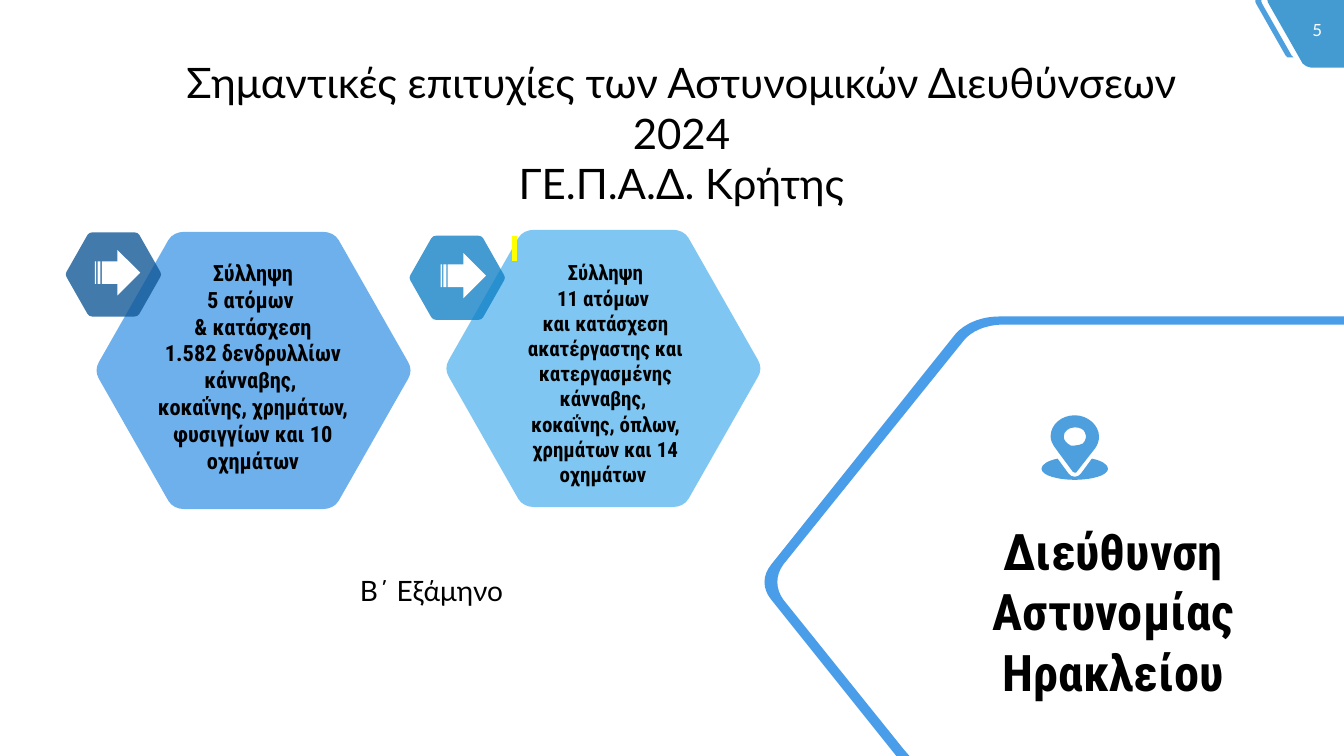
"""Build the slide on police successes in Crete, laid out on a grid of tenth-inch cells."""
from lxml import etree
from pptx import Presentation
from pptx import util as u
from pptx.dml.color import RGBColor
from pptx.enum import shapes, text
from pptx.oxml.ns import qn

CELL = u.Inches(0.1)
COLS, ROWS = 133.33, 75
BLACK = RGBColor(0x00, 0x00, 0x00)
WHITE = RGBColor(0xFF, 0xFF, 0xFF)
SKY = RGBColor(0x60, 0xB9, 0xEF)
OCEAN = RGBColor(0x14, 0x83, 0xC7)
BLUE = RGBColor(0x4A, 0x9D, 0xE8)
NAVY = RGBColor(0x13, 0x59, 0x98)
STEEL = RGBColor(0x4D, 0x9F, 0xDD)
LATO, ROBOTO = "Lato", "Roboto Condensed"

prs = Presentation()
prs.slide_width, prs.slide_height = u.Inches(13.33), u.Inches(7.5)
s = prs.slides.add_slide(prs.slide_layouts[5])


def trace(contours, color, alpha=100, box=(0, 0, 1, 1)):
    """Draw closed contours: a pair is a straight step, six numbers are a Bezier curve."""
    left, top, width, height = box
    builder = None
    for contour in contours:
        points = [((left + step[i] * width) * CELL, (top + step[i + 1] * height) * CELL)
                  for step in contour for i in range(0, len(step), 2)]
        if builder is None:
            builder = s.shapes.build_freeform(*points[0])
        else:
            builder.move_to(*points[0])
        builder.add_line_segments(points[1:], close=True)
    sp = builder.convert_to_shape()
    nodes = iter(list(next(sp._element.iter(qn("a:path")))))
    for contour in contours:
        next(nodes)
        for step in contour[1:]:
            node = next(nodes)
            if len(step) == 6:
                curve = etree.Element(qn("a:cubicBezTo"))
                node.addprevious(curve)
                for line in (node, next(nodes), next(nodes)):
                    curve.append(line[0])
                    line.getparent().remove(line)
        next(nodes)
    sp.shadow.inherit = False
    sp.fill.solid()
    sp.fill.fore_color.rgb = color
    sp.line.fill.background()
    if alpha < 100:
        clr = sp.fill._xPr.find(qn("a:solidFill"))[0]
        etree.SubElement(clr, qn("a:alpha"), val=str(alpha * 1000))


def write(box, lines, size, name, color=BLACK, bold=False, sp=None):
    """Fill a text box, or a given placeholder, with centred paragraphs."""
    left, top, width, height = (round(v * CELL) for v in box)
    sp = sp or s.shapes.add_textbox(left, top, width, height)
    sp.left, sp.top, sp.width, sp.height = left, top, width, height
    tf = sp.text_frame
    tf.word_wrap = True
    tf.auto_size = text.MSO_AUTO_SIZE.NONE
    tf.vertical_anchor = text.MSO_ANCHOR.TOP
    for i, line in enumerate(lines):
        p = tf.paragraphs[0] if i == 0 else tf.add_paragraph()
        p.text = line
        p.alignment = text.PP_ALIGN.CENTER
        for r in p.runs:
            for key, value in dict(size=u.Pt(size), name=name, bold=bold).items():
                setattr(r.font, key, value)
            r.font.color.rgb = color
    return tf


trace([[(125.7, 0), (COLS, 0), (COLS, 6.7), (130, 6.7), (129.7, 6.7, 129.4, 6.5, 129.2, 6.3),
        (125.9, 0.5), (125.8, 0.3, 125.7, 0.2, 125.7, 0)]], OCEAN, 80)
trace([[(124.5, 0), (125.1, 0), (125.1, 0.1, 125.1, 0.3, 125.2, 0.4), (128.1, 5.5), (128.3, 5.7),
        (127.7, 5.7), (127.5, 5.5), (124.6, 0.4), (124.5, 0.3, 124.5, 0.1, 124.5, 0)]], STEEL)
write((128.6, 1.45, 4.1, 3), ["5"], 12, LATO, WHITE)

half = [(0.23, 0.03), (0.24, 0.01, 0.26, 0, 0.28, 0), (0.72, 0), (0.74, 0, 0.76, 0.01, 0.77, 0.03),
        (0.99, 0.47), (1, 0.49, 1, 0.51, 0.99, 0.53)]
hexagon = half + [tuple(1 - v for v in step) for step in half]
cards = [((44.2, 22.8), SKY, (40.6, 23.38), OCEAN, (43.7, 25.1)),
         ((9.5, 23), BLUE, (6.5, 23.05), NAVY, (9.4, 24.8))]
for corner, color, badge_corner, badge_color, arrow_corner in cards:
    trace([hexagon], color, 80, (*corner, 31.3, 27.5))
    trace([hexagon], badge_color, 80, (*badge_corner, 9.5, 8.35))
    arrow = s.shapes.add_shape(shapes.MSO_SHAPE.STRIPED_RIGHT_ARROW,
                               *(round(v * CELL) for v in (*arrow_corner, 4.5, 4.5)))
    arrow.shadow.inherit = False
    arrow.fill.solid()
    arrow.fill.fore_color.rgb = WHITE
    arrow.line.fill.background()

write((12.6, 5.15, 110, 11.1),
      ["Σημαντικές επιτυχίες των Αστυνομικών Διευθύνσεων 2024\vΓΕ.Π.Α.Δ. Κρήτης"],
      30, LATO, sp=s.shapes.title)
write((29.7, 56.4, 26.2, 4.4), ["Β΄ Εξάμηνο"], 20, LATO)
tf = write((49.8, 22.8, 20.5, 26.3),
           [" ", "Σύλληψη", "11 ατόμων ", "και κατάσχεση", "ακατέργαστης και κατεργασμένης",
            "κάνναβης, ", "κοκαΐνης, όπλων,", "χρημάτων και 14 οχημάτων "], 15, ROBOTO, bold=True)
marker = tf.paragraphs[0]
marker.alignment = text.PP_ALIGN.LEFT
highlight = etree.Element(qn("a:highlight"))
etree.SubElement(highlight, qn("a:srgbClr"), val="FFFF00")
marker.runs[0].font._rPr.find(qn("a:latin")).addprevious(highlight)
write((13.1, 25.2, 24, 25.2),
      ["Σύλληψη", "5 ατόμων ", "& κατάσχεση", "1.582 δενδρυλλίων κάνναβης, ",
       "κοκαΐνης, χρημάτων, φυσιγγίων και 10 οχημάτων"], 16, ROBOTO, bold=True)

trace([[(COLS, ROWS), (COLS, 32.2), (99.6, 32.2), (97.9, 32.2, 96.3, 32.8, 95.5, 33.9), (77.7, 56),
        (76.9, 57.1, 76.9, 58.4, 77.7, 59.5), (89.6, 74.3), (90.2, ROWS), (88.9, ROWS),
        (76.5, 59.5), (75.6, 58.4, 75.6, 57.1, 76.5, 56), (94.8, 33.1),
        (95.7, 32.1, 97.3, 31.4, 99.1, 31.4), (COLS, 31.4)]], BLUE)
write((92.05, 51.1, 36.7, 19.2), ["Διεύθυνση Αστυνομίας Ηρακλείου"], 36, ROBOTO, bold=True)

pin_hole = [(106.6, 42.4), (107.1, 42.4, 107.5, 42.6, 107.6, 42.9), (107.8, 43.3, 107.7, 43.7, 107.4, 44),
            (107.2, 44.1, 106.9, 44.2, 106.6, 44.2), (106.5, 44.2, 106.3, 44.2, 106.2, 44.2),
            (105.8, 44, 105.5, 43.7, 105.5, 43.3), (105.5, 42.8, 106, 42.4, 106.6, 42.4)]
pin = [(106.6, 41.2), (105.3, 41.2, 104.2, 42.1, 104.2, 43.3), (104.2, 43.7, 104.4, 44.1, 104.7, 44.5),
       (106.4, 46.8), (106.5, 46.9, 106.5, 46.9, 106.6, 46.9), (106.7, 46.9, 106.8, 46.9, 106.8, 46.8),
       (108.6, 44.5), (108.9, 44.1, 109, 43.7, 109, 43.3), (109, 42.2, 107.9, 41.2, 106.6, 41.2)]
trace([pin_hole, pin], STEEL)
trace([[(104.9, 45.5), (103.9, 45.7, 103.3, 46.1, 103.3, 46.5), (103.3, 47.2, 105, 47.6, 106.6, 47.6),
        (108.2, 47.6, 109.9, 47.2, 109.9, 46.5), (109.9, 46.1, 109.3, 45.7, 108.3, 45.5), (107.2, 47),
        (107.1, 47.2, 106.8, 47.3, 106.6, 47.3), (106.4, 47.3, 106.1, 47.2, 106, 47)]], STEEL)

prs.save("out.pptx")
